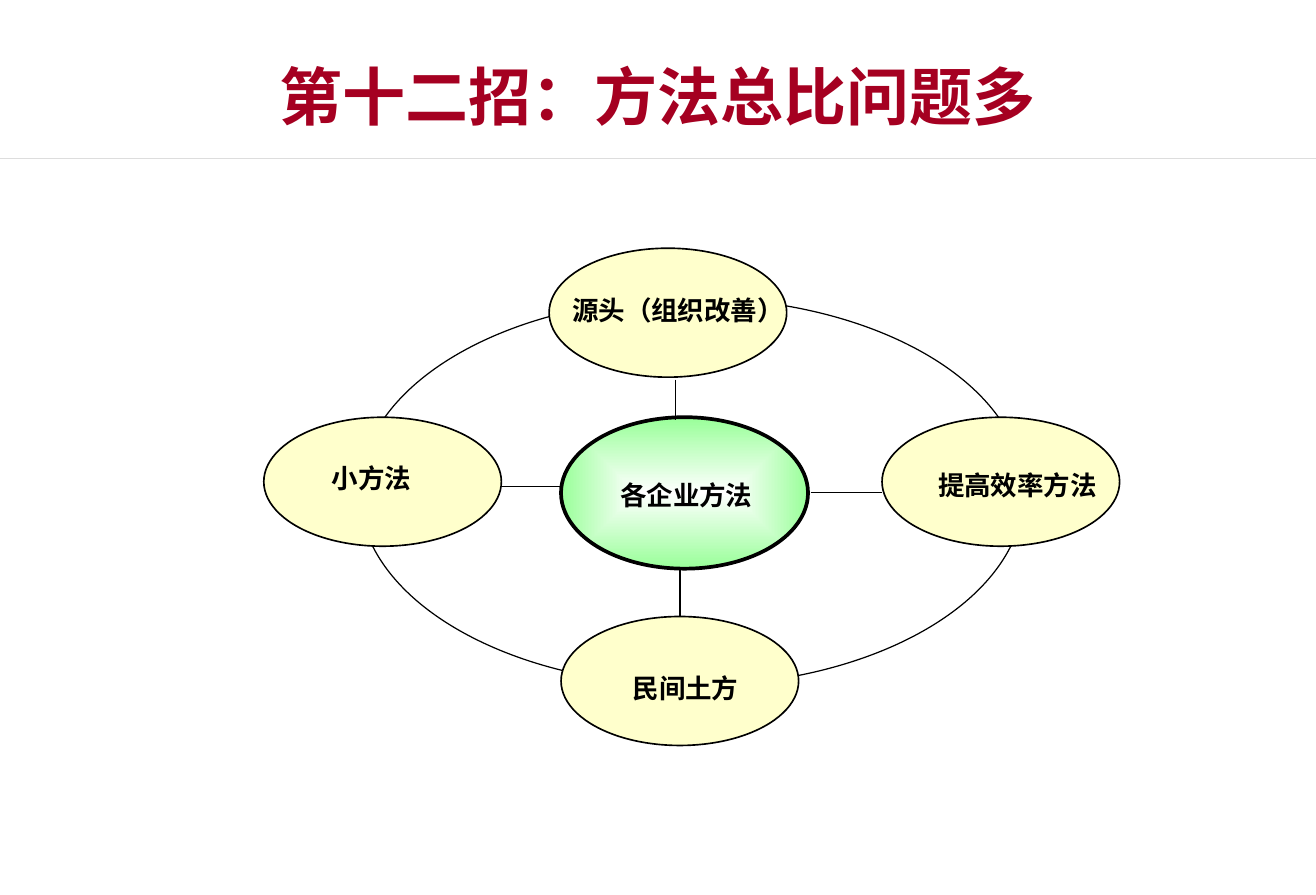
from lxml.etree import SubElement
from pptx import Presentation
from pptx.dml.color import RGBColor
from pptx.enum.shapes import MSO_CONNECTOR as CONN, MSO_SHAPE as SHAPE
from pptx.enum.text import MSO_ANCHOR as ANCHOR, MSO_AUTO_SIZE as AUTO, PP_ALIGN as ALIGN
from pptx.oxml.ns import qn
from pptx.util import Pt

WIDTH, HEIGHT = 793.75, 540
BLACK, RED, GREY = "000000", "A50021", "DDDDDD"
CREAM, WHITE, GREEN = "FFFFCC", "FFFFFF", "99FF99"


def rgb(value):
    return RGBColor.from_string(value)


class Canvas:
    """Draws on one slide in one font; all lengths are points."""

    font = "Noto Sans CJK SC"

    def __init__(self, slide):
        self.shapes = slide.shapes

    def outline(self, line, color, width):
        line.color.rgb = rgb(color)
        line.width = Pt(width)

    def ellipse(self, x, y, w, h, fill=None, width=1):
        """Fill is a colour, a (centre, edge) pair or None."""
        sp = self.shapes.add_shape(SHAPE.OVAL, Pt(x), Pt(y), Pt(w), Pt(h))
        sp.shadow.inherit = False
        self.outline(sp.line, BLACK, width)
        if fill is None:
            sp.fill.background()
        elif isinstance(fill, tuple):
            self.radial(sp, fill)
        else:
            sp.fill.solid()
            sp.fill.fore_color.rgb = rgb(fill)

    def radial(self, sp, colors):
        """Fill from the centre outwards, following the shape."""
        sp.fill.gradient()
        for stop, color in zip(sp.fill.gradient_stops, colors):
            stop.color.rgb = rgb(color)
        grad = sp._element.spPr.find(qn("a:gradFill"))
        grad.remove(grad.find(qn("a:lin")))
        shade = SubElement(grad, qn("a:path"), {"path": "shape"})
        SubElement(shade, qn("a:fillToRect"), dict.fromkeys("ltrb", "50000"))

    def line(self, x1, y1, x2, y2, color=BLACK):
        cn = self.shapes.add_connector(CONN.STRAIGHT, Pt(x1), Pt(y1), Pt(x2), Pt(y2))
        self.outline(cn.line, color, 1)
        SubElement(cn._element.spPr, qn("a:effectLst"))

    def text(self, x, y, w, h, text, size=16, color=BLACK, align=ALIGN.LEFT, **frame):
        tf = self.shapes.add_textbox(Pt(x), Pt(y), Pt(w), Pt(h)).text_frame
        frame = {"word_wrap": False, "auto_size": AUTO.SHAPE_TO_FIT_TEXT, **frame}
        for name, value in frame.items():
            setattr(tf, name, value)
        p = tf.paragraphs[0]
        p.alignment = align
        r = p.add_run()
        r.text = text
        for name, value in {"name": self.font, "size": Pt(size), "bold": True}.items():
            setattr(r.font, name, value)
        r.font.color.rgb = rgb(color)
        SubElement(r._r.get_or_add_rPr(), qn("a:ea"), {"typeface": self.font})


def main():
    prs = Presentation()
    prs.slide_width, prs.slide_height = Pt(WIDTH), Pt(HEIGHT)
    c = Canvas(prs.slides.add_slide(prs.slide_layouts[6]))

    c.line(0, 95.75, WIDTH, 95.75, GREY)
    c.text(0, 31, WIDTH, 52.5, "第十二招：方法总比问题多", 38, RED, ALIGN.CENTER,
           word_wrap=True, vertical_anchor=ANCHOR.MIDDLE)

    c.ellipse(216.75, 179.75, 401, 234, width=0.75)
    for x, y in [(338.4, 372), (159.1, 251.75), (331.2, 149.75), (532, 251.75)]:
        c.ellipse(x, y, 143.3, 77.8, CREAM)
    c.ellipse(338.4, 251.75, 149, 91.4, (WHITE, GREEN), 2.25)

    spokes = [(407.5, 229, 407.5, 253.4), (302.4, 293.6, 338.4, 293.6),
              (488.9, 297.2, 532, 297.2), (410.2, 342, 410.2, 372)]
    for spoke in spokes:
        c.line(*spoke)

    labels = [("小方法", 193, 275.5, 62.6, ALIGN.LEFT),
              ("源头（组织改善）", 337.7, 174, 142.6, ALIGN.CENTER),
              ("提高效率方法", 558.7, 279.4, 110.2, ALIGN.LEFT),
              ("民间土方", 374.2, 402.2, 78.5, ALIGN.CENTER),
              ("各企业方法", 367, 285.8, 94.3, ALIGN.LEFT)]
    for label, x, y, w, align in labels:
        c.text(x, y, w, 26.6, label, align=align)

    prs.save("out.pptx")


if __name__ == "__main__":
    main()
